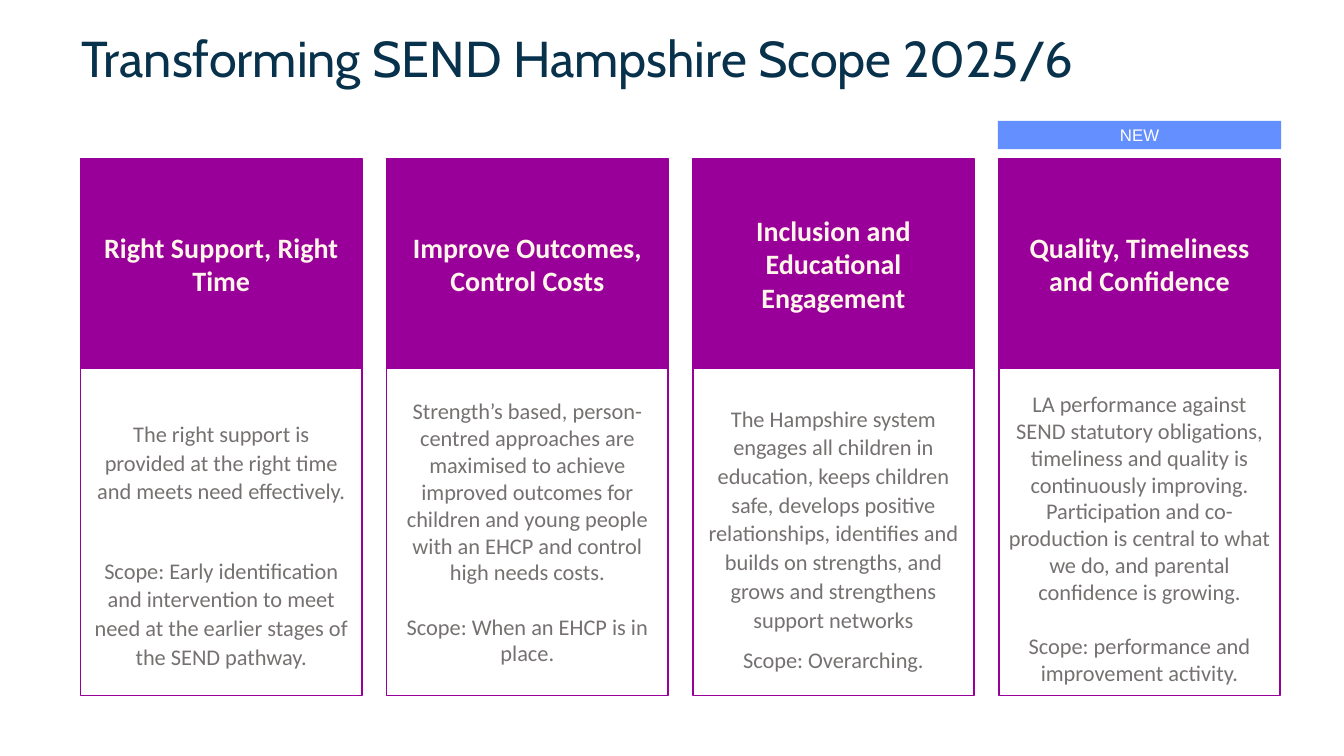
from pptx import Presentation
from pptx.dml.color import RGBColor
from pptx.enum.shapes import MSO_SHAPE as Shape
from pptx.enum.text import MSO_ANCHOR as Anchor, PP_ALIGN as Align
from pptx.util import Pt

NAVY = RGBColor(0x08, 0x31, 0x4C)
PURPLE = RGBColor(0x99, 0x00, 0x99)
CREAM = RGBColor(0xFF, 0xF5, 0xE9)
GREY = RGBColor(0x76, 0x71, 0x71)
BLUE = RGBColor(0x64, 0x8F, 0xFF)
WHITE = RGBColor(0xFF, 0xFF, 0xFF)

LEFT, TOP, WIDE, PITCH = 57.6, 113.4, 200.9, 218.64
HEAD, BASE, LAP = 149.8, 496.7, 10.8

THEMES = [
    ("Right Support, Right Time",
     "The right support is provided at the right time and meets need effectively.",
     "Scope: Early identification and intervention to meet need at the earlier "
     "stages of the SEND pathway.",
     dict(lap=LAP, pad=28, gap=36, lead=1.07)),
    ("Improve Outcomes, Control Costs",
     "Strength’s based, person-centred approaches are maximised to achieve improved "
     "outcomes for children and young people with an EHCP and control high needs costs.",
     "Scope: When an EHCP is in place.",
     dict(lap=0, pad=0, gap=19.5, lead=1)),
    ("Inclusion and Educational Engagement",
     "The Hampshire system engages all children in education, keeps children safe, "
     "develops positive relationships, identifies and builds on strengths, and grows "
     "and strengthens support networks",
     "Scope: Overarching.",
     dict(lap=LAP, pad=19, gap=8, lead=1.07)),
    ("Quality, Timeliness and Confidence",
     "LA performance against SEND statutory obligations, timeliness and quality is "
     "continuously improving. Participation and co-production is central to what we "
     "do, and parental confidence is growing.",
     "Scope: performance and improvement activity.",
     dict(lap=LAP, pad=19.5, gap=19.5, lead=1)),
]


def style(para, name, size, color, bold=False):
    font = para.font
    font.name, font.size, font.bold = name, Pt(size), bold
    font.color.rgb = color


def panel(slide, box, fill, line):
    shape = slide.shapes.add_shape(Shape.RECTANGLE, *map(Pt, box))
    shape.shadow.inherit = False
    if fill is None:
        shape.fill.background()
    else:
        shape.fill.solid()
        shape.fill.fore_color.rgb = fill
    if line is None:
        shape.line.fill.background()
    else:
        shape.line.color.rgb = line
        shape.line.width = Pt(1)
    frame = shape.text_frame
    frame.word_wrap = True
    frame.vertical_anchor = Anchor.MIDDLE
    return frame


def label(slide, box, text, fill, line, *look):
    para = panel(slide, box, fill, line).paragraphs[0]
    para.text = text
    para.alignment = Align.CENTER
    style(para, *look)


def body(slide, box, texts, pad, gap, lead):
    frame = panel(slide, box, None, PURPLE)
    frame.margin_top = Pt(3.6 + pad)
    frame.text = "\n".join(texts)
    for para in frame.paragraphs:
        para.alignment = Align.CENTER
        para.line_spacing = lead
        style(para, "Calibri", 16, GREY)
    frame.paragraphs[1].space_before = Pt(gap)


def column(slide, box, head, aim, scope, lap, **flow):
    left, top, wide, high = box
    start = top + HEAD - lap
    body(slide, (left, start, wide, top + high - start), (aim, scope), **flow)
    label(slide, (left, top, wide, HEAD), head, PURPLE, PURPLE,
          "Calibri", 20, CREAM, True)


def title(slide, box, text):
    shape = slide.shapes.title
    shape.left, shape.top, shape.width, shape.height = map(Pt, box)
    frame = shape.text_frame
    frame.text = text
    frame.word_wrap = True
    frame.vertical_anchor = Anchor.MIDDLE
    para = frame.paragraphs[0]
    para.alignment = Align.LEFT
    para.line_spacing = 0.9
    style(para, "Cabin", 36, NAVY)


def main():
    deck = Presentation()
    deck.slide_width, deck.slide_height = Pt(960), Pt(540)
    slide = deck.slides.add_slide(deck.slide_layouts[5])
    title(slide, (51, 19.4, 802, 48.2), "Transforming SEND Hampshire Scope 2025/6")
    for i, (head, aim, scope, flow) in enumerate(THEMES):
        left = LEFT + i * PITCH
        column(slide, (left, TOP, WIDE, BASE - TOP), head, aim, scope, **flow)
    label(slide, (left - 0.7, 86.4, WIDE + 1.4, 20.2), "NEW", BLUE, None,
          "Arial", 12, WHITE)
    deck.save("out.pptx")


if __name__ == "__main__":
    main()
